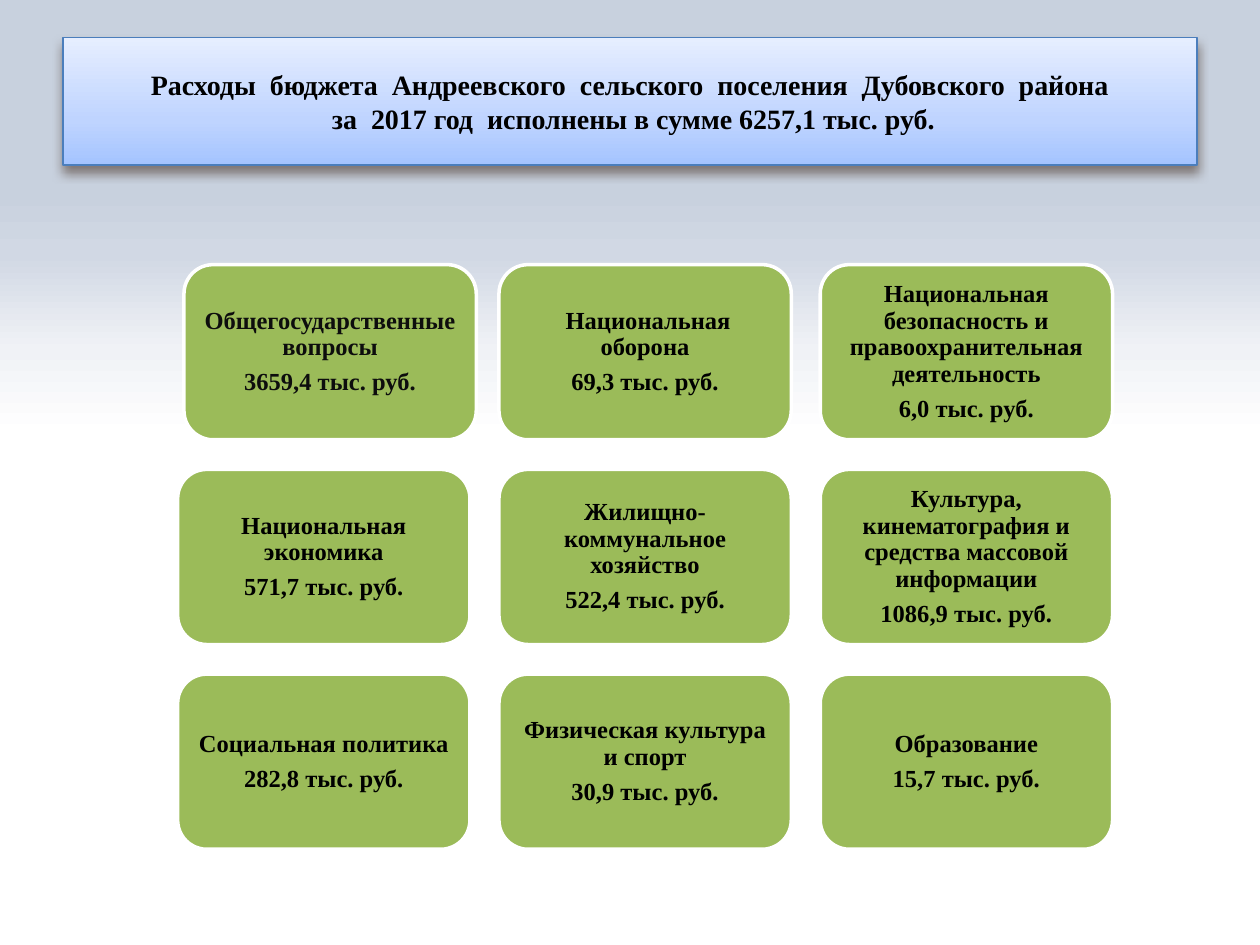
from lxml.etree import SubElement
from pptx import Presentation
from pptx.dml.color import RGBColor as Color
from pptx.enum.shapes import MSO_SHAPE as Preset
from pptx.enum.text import MSO_ANCHOR as Anchor, PP_ALIGN as Align
from pptx.oxml.ns import qn
from pptx.util import Inches, Pt

HEADING = (
    "Расходы  бюджета  Андреевского  сельского  поселения  Дубовского  района",
    " за  2017 год  исполнены в сумме 6257,1 тыс. руб.",
)
EXPENSES = [
    ("Общегосударственные вопросы", "3659,4"),
    (" Национальная оборона", "69,3"),
    ("Национальная безопасность и правоохранительная деятельность", "6,0"),
    ("Национальная экономика", "571,7"),
    ("Жилищно-коммунальное хозяйство", "522,4"),
    ("Культура, кинематография и средства массовой информации", "1086,9"),
    ("Социальная политика", "282,8"),
    ("Физическая культура и спорт", "30,9"),
    ("Образование", "15,7"),
]
UNIT = "тыс. руб."
THEME = {
    "font": "Times New Roman",
    "heading_size": 16,
    "card_size": 14,
    "text": "000000",
    "first_text": "0D0D0D",
    "card": "9BBB59",
    "card_line": "FFFFFF",
    "heading_line": "4B7EBC",
    "shadow": "4E3B30",
    "heading_stops": [(0, "A4C4FF"), (35, "BFD4FF"), (100, "E6EEFF")],
    "backdrop_stops": [(0, "C8D1DE"), (20, "C8D1DE"), (27, "D1D8E4"),
                       (37, "F0F2F6"), (46, "FFFFFF"), (100, "FFFFFF")],
}
COLUMNS = 3
GRID_LEFT, GRID_TOP = 1.41, 2.1
CARD_WIDTH, CARD_HEIGHT = 2.32, 1.39
COLUMN_STEP, ROW_STEP = 2.55, 1.625
FIRST_SHIFT = 0.05


def add_color(parent, rgb):
    return SubElement(parent, qn("a:srgbClr"), val=rgb)


def set_gradient(fill, owner, stops, angle):
    fill.gradient()
    gradient = next(owner.iter(qn("a:gradFill")))
    stop_list = gradient.find(qn("a:gsLst"))
    for stop in list(stop_list):
        stop_list.remove(stop)
    for share, rgb in stops:
        add_color(SubElement(stop_list, qn("a:gs"), pos=str(share * 1000)), rgb)
    gradient.find(qn("a:lin")).set("ang", str(angle * 60000))


def add_panel(slide, preset, left, top, width, height, line, weight):
    panel = slide.shapes.add_shape(
        preset, Inches(left), Inches(top), Inches(width), Inches(height))
    panel.shadow.inherit = False
    panel.line.color.rgb = Color.from_string(line)
    panel.line.width = Pt(weight)
    panel.text_frame.word_wrap = True
    panel.text_frame.vertical_anchor = Anchor.MIDDLE
    return panel


def style(paragraph, size, rgb):
    paragraph.alignment = Align.CENTER
    paragraph.font.name = THEME["font"]
    paragraph.font.size = Pt(size)
    paragraph.font.bold = True
    paragraph.font.color.rgb = Color.from_string(rgb)


def add_heading(slide):
    heading = add_panel(slide, Preset.RECTANGLE, 0.5, 0.3, 9, 1.01,
                        THEME["heading_line"], 0.75)
    properties = heading._element.spPr
    set_gradient(heading.fill, properties, THEME["heading_stops"], 270)
    shadow = SubElement(
        properties.find(qn("a:effectLst")), qn("a:outerShdw"),
        blurRad=str(Pt(6)), dist=str(Pt(4)), dir="5400000", rotWithShape="0")
    SubElement(add_color(shadow, THEME["shadow"]), qn("a:alpha"), val="60000")
    paragraph = heading.text_frame.paragraphs[0]
    style(paragraph, THEME["heading_size"], THEME["text"])
    paragraph.add_run().text = HEADING[0]
    paragraph.add_line_break()
    paragraph.add_run().text = HEADING[1]


def add_card(slide, index, title, amount):
    row, column = divmod(index, COLUMNS)
    first = index == 0
    left = GRID_LEFT + column * COLUMN_STEP + (FIRST_SHIFT if first else 0)
    card = add_panel(slide, Preset.FLOWCHART_ALTERNATE_PROCESS,
                     left, GRID_TOP + row * ROW_STEP, CARD_WIDTH, CARD_HEIGHT,
                     THEME["card_line"], 2)
    card.fill.solid()
    card.fill.fore_color.rgb = Color.from_string(THEME["card"])
    frame = card.text_frame
    frame.margin_left = frame.margin_right = Inches(0.06)
    frame.margin_top = frame.margin_bottom = Inches(0.06)
    frame.text = f"{title}\n{amount} {UNIT}"
    for paragraph in frame.paragraphs:
        style(paragraph, THEME["card_size"],
              THEME["first_text" if first else "text"])
        paragraph.line_spacing = 0.9
        paragraph.space_after = Pt(0.35 * THEME["card_size"])


def main():
    deck = Presentation()
    deck.slide_width, deck.slide_height = Inches(10), Inches(7.5)
    slide = deck.slides.add_slide(deck.slide_layouts[6])
    set_gradient(slide.background.fill, slide._element,
                 THEME["backdrop_stops"], 90)
    add_heading(slide)
    for index, (title, amount) in enumerate(EXPENSES):
        add_card(slide, index, title, amount)
    deck.save("out.pptx")


if __name__ == "__main__":
    main()
